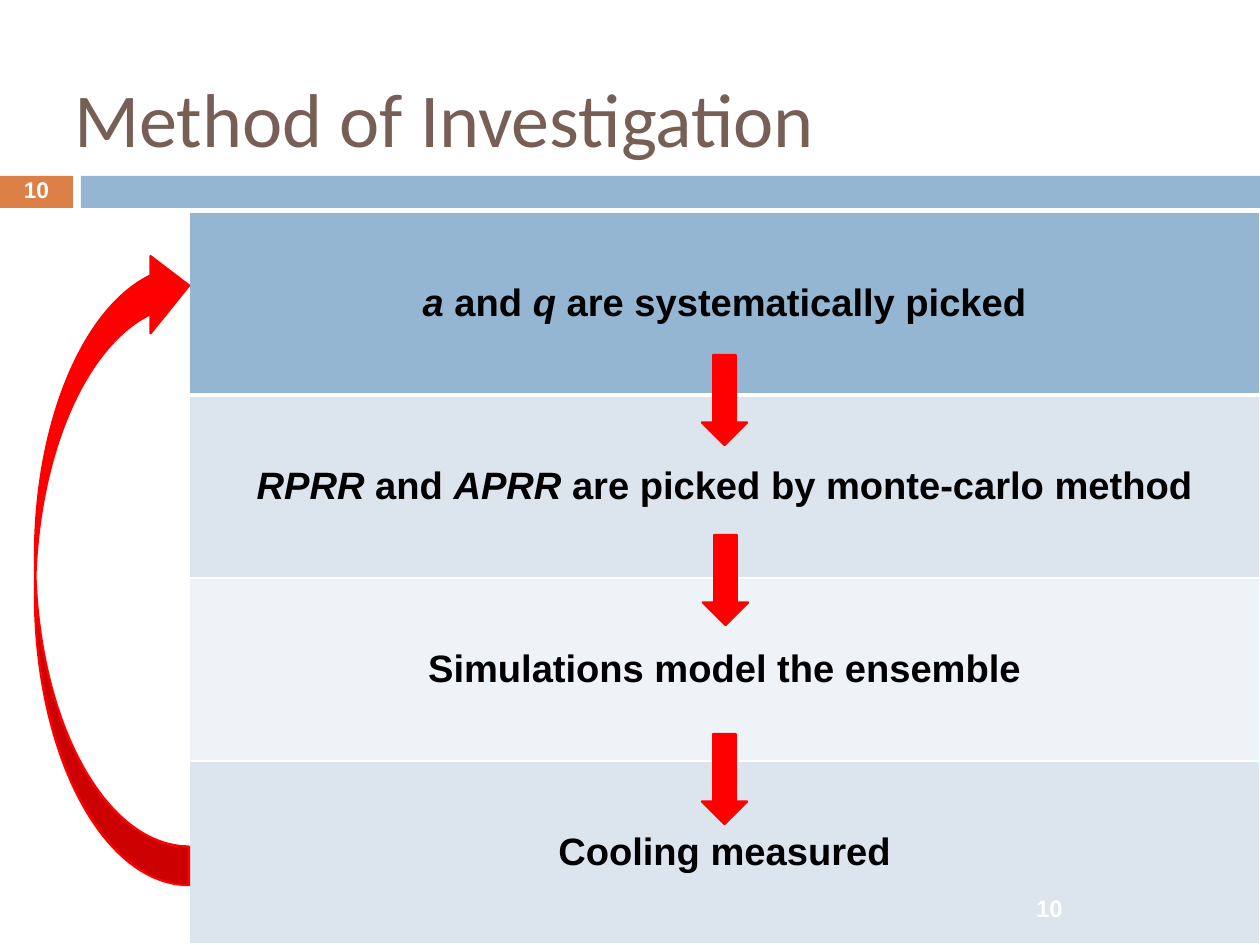
"""Build the Method of Investigation slide: four steps joined in a loop by arrows."""
import pptx
import pptx.dml.color
import pptx.enum.shapes
import pptx.enum.text
import pptx.oxml.ns
import pptx.util
from lxml import etree

TITLE = "Method of Investigation"
PAGE_NUMBER = "10"
STEPS = [
    [("a", True), (" and ", False), ("q", True), (" are systematically picked", False)],
    [("RPRR", True), (" and ", False), ("APRR", True), (" are picked by monte-carlo method", False)],
    [("Simulations model the ensemble", False)],
    [("Cooling measured", False)],
]
STEP_FILLS = ["blue", "pale", "paler", "pale"]
COLOURS = {
    "orange": "DD8047", "blue": "94B6D2", "pale": "DCE5EE", "paler": "EEF3F7",
    "red": "FF0000", "brown": "775F55", "white": "FFFFFF", "black": "000000",
}
BANDS = [((0, 176, 73, 32), "orange"), ((81, 176, 1179, 32), "blue")]
TITLE_BOX = (63, 38, 1134, 158)
NUMBER_BOXES = [((0, 175, 73, 34), 14.3, 0.83), ((1013, 891, 73, 34), 15, 1.0)]
TABLE_LEFT, TABLE_TOP, TABLE_WIDTH, ROW_HEIGHT = 189, 212, 1071, 183
DOWN_ARROWS = [(702, 355, 45, 90), (703, 535, 45, 90), (702, 734, 45, 90)]
LOOP_ARROW = (35, 247, 154, 638)

PX = 8000
SHAPES = pptx.enum.shapes.MSO_SHAPE
MIDDLE = pptx.enum.text.MSO_ANCHOR.MIDDLE
CENTER = pptx.enum.text.PP_ALIGN.CENTER


def emu(box):
    return [length * PX for length in box]


def colour(name):
    return pptx.dml.color.RGBColor.from_string(COLOURS[name])


def style(paragraph, font_name, size, colour_name, bold):
    paragraph.font.name = font_name
    paragraph.font.size = pptx.util.Pt(size)
    paragraph.font.bold = bold
    paragraph.font.color.rgb = colour(colour_name)


def add_filled(slide, kind, box, fill, line_width=0):
    shape = slide.shapes.add_shape(kind, *emu(box))
    shape.shadow.inherit = False
    shape.fill.solid()
    shape.fill.fore_color.rgb = colour(fill)
    if line_width:
        shape.line.color.rgb = colour(fill)
        shape.line.width = pptx.util.Pt(line_width)
    else:
        shape.line.fill.background()
    return shape


def add_text(slide, box, text):
    frame = slide.shapes.add_textbox(*emu(box)).text_frame
    frame.word_wrap = True
    frame.vertical_anchor = MIDDLE
    frame.paragraphs[0].text = text
    return frame.paragraphs[0]


def add_borders(cell, widths):
    properties = cell._tc.get_or_add_tcPr()
    for side, width in widths.items():
        line = etree.SubElement(properties, pptx.oxml.ns.qn(f"a:ln{side}"), w=str(pptx.util.Pt(width)))
        fill = etree.SubElement(line, pptx.oxml.ns.qn("a:solidFill"))
        etree.SubElement(fill, pptx.oxml.ns.qn("a:srgbClr"), val=COLOURS["white"])


def add_steps(slide):
    box = (TABLE_LEFT, TABLE_TOP, TABLE_WIDTH, ROW_HEIGHT * len(STEPS))
    table = slide.shapes.add_table(len(STEPS), 1, *emu(box)).table
    for row, (runs, fill) in enumerate(zip(STEPS, STEP_FILLS)):
        cell = table.cell(row, 0)
        top = 3 if row == 1 else 1
        bottom = 3 if row == 0 else 1
        add_borders(cell, {"L": 1, "R": 1, "T": top, "B": bottom})
        cell.fill.solid()
        cell.fill.fore_color.rgb = colour(fill)
        cell.vertical_anchor = MIDDLE
        paragraph = cell.text_frame.paragraphs[0]
        paragraph.alignment = CENTER
        style(paragraph, "Arial", 24, "black", True)
        for text, italic in runs:
            run = paragraph.add_run()
            run.text = text
            run.font.name = "Arial"
            run.font.size = pptx.util.Pt(24)
            run.font.bold = True
            run.font.italic = italic
            run.font.color.rgb = colour("black")


def main():
    presentation = pptx.Presentation()
    presentation.slide_width, presentation.slide_height = emu((1260, 945))
    slide = presentation.slides.add_slide(presentation.slide_layouts[6])
    for box, fill in BANDS:
        add_filled(slide, SHAPES.RECTANGLE, box, fill)
    style(add_text(slide, TITLE_BOX, TITLE), "Calibri", 48, "brown", False)
    add_steps(slide)
    for box, size, spacing in NUMBER_BOXES:
        number = add_text(slide, box, PAGE_NUMBER)
        number.alignment = CENTER
        number.line_spacing = spacing
        style(number, "Arial", size, "white", True)
    for box in DOWN_ARROWS:
        add_filled(slide, SHAPES.DOWN_ARROW, box, "red", 1.5)
    loop = add_filled(slide, SHAPES.CURVED_LEFT_ARROW, LOOP_ARROW, "red", 1.5)
    loop.rotation = 180
    presentation.save("out.pptx")


if __name__ == "__main__":
    main()
